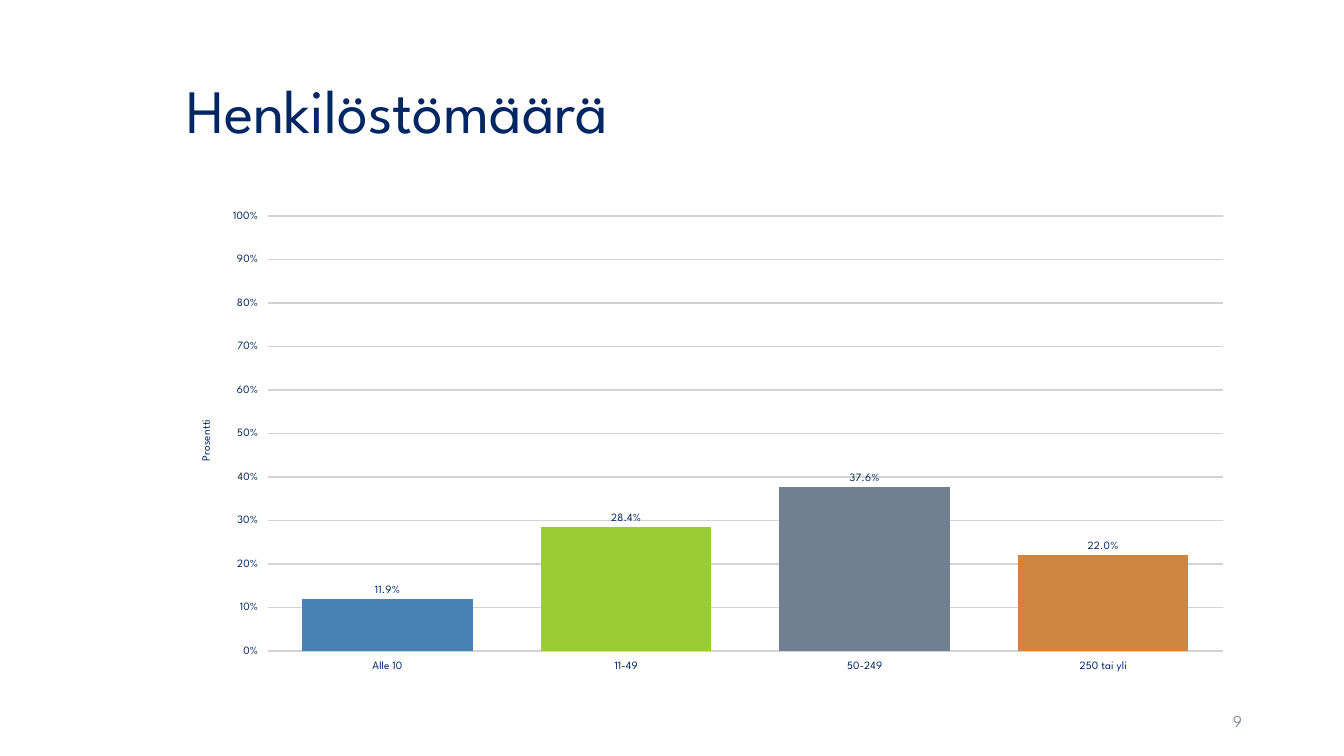
import pptx
import pptx.chart.data
import pptx.dml.color
import pptx.enum.chart
import pptx.enum.text
import pptx.oxml
import pptx.oxml.ns
import pptx.util

Cm = pptx.util.Cm
Pt = pptx.util.Pt
RGBColor = pptx.dml.color.RGBColor
PP_ALIGN = pptx.enum.text.PP_ALIGN
MSO_ANCHOR = pptx.enum.text.MSO_ANCHOR

FONT = "League Spartan"
NAVY = RGBColor(0x00, 0x26, 0x63)
GREY = RGBColor(0x8C, 0x8E, 0x9F)
GRID = RGBColor(0xD3, 0xD3, 0xD3)
BLUE = RGBColor(0x46, 0x82, 0xB4)
GREEN = RGBColor(0x9A, 0xCD, 0x32)
SLATE = RGBColor(0x70, 0x80, 0x90)
ORANGE = RGBColor(0xCD, 0x85, 0x3F)

STAFF = [
    ("Alle 10", 0.119, BLUE),
    ("11-49", 0.284, GREEN),
    ("50-249", 0.376, SLATE),
    ("250 tai yli", 0.22, ORANGE),
]


def set_font(font, size, color):
    font.name = FONT
    font.size = Pt(size)
    font.bold = False
    font.color.rgb = color


def add_text(s, text, box, size, color, align, anchor):
    tf = s.shapes.add_textbox(*box).text_frame
    tf.word_wrap = True
    tf.vertical_anchor = anchor
    tf.text = text
    p = tf.paragraphs[0]
    p.alignment = align
    set_font(p.runs[0].font, size, color)
    return p


def set_layout(parent, index, **values):
    for old in parent.findall(pptx.oxml.ns.qn("c:layout")):
        parent.remove(old)
    items = "".join(f'<c:{k} val="{v}"/>' for k, v in values.items())
    parent.insert(index, pptx.oxml.parse_xml(
        f'<c:layout {pptx.oxml.ns.nsdecls("c")}>'
        f"<c:manualLayout>{items}</c:manualLayout></c:layout>"))


def style_axis(axis):
    axis.major_tick_mark = pptx.enum.chart.XL_TICK_MARK.OUTSIDE
    axis.minor_tick_mark = pptx.enum.chart.XL_TICK_MARK.NONE
    axis.format.line.fill.background()
    set_font(axis.tick_labels.font, 8, NAVY)


def style_percent_axis(axis):
    style_axis(axis)
    axis.minimum_scale = 0
    axis.maximum_scale = 1
    axis.major_unit = 0.1
    axis.tick_labels.number_format = "0%"
    axis.tick_labels.number_format_is_linked = False
    axis.major_gridlines.format.line.color.rgb = GRID
    axis.major_gridlines.format.line.width = Pt(1)
    title = axis.axis_title
    tf = title.text_frame
    tf.text = "Prosentti"
    set_font(tf.paragraphs[0].runs[0].font, 8, NAVY)
    body = tf._txBody.bodyPr
    body.set("rot", "-5400000")
    body.set("vert", "horz")
    set_layout(title._element, 1, xMode="edge", yMode="edge", x=0.02, y=0.45)


def style_bars(plot):
    plot.gap_width = 40
    plot.overlap = -2
    plot.vary_by_categories = False
    series = plot.series[0]
    series.format.fill.solid()
    series.format.fill.fore_color.rgb = BLUE
    for i, (_, _, color) in enumerate(STAFF):
        fill = series.points[i].format.fill
        fill.solid()
        fill.fore_color.rgb = color
    labels = series.data_labels
    labels.show_value = True
    labels.number_format = "0.0%"
    labels.number_format_is_linked = False
    labels.position = pptx.enum.chart.XL_LABEL_POSITION.OUTSIDE_END
    set_font(labels.font, 8, NAVY)


def add_staff_chart(s, box):
    data = pptx.chart.data.CategoryChartData()
    data.categories = [name for name, _, _ in STAFF]
    data.add_series("Series 1", [share for _, share, _ in STAFF])
    kind = pptx.enum.chart.XL_CHART_TYPE.COLUMN_CLUSTERED
    chart = s.shapes.add_chart(kind, *box, data).chart
    chart.has_legend = False
    chart.has_title = False
    set_font(chart.font, 18, NAVY)
    style_axis(chart.category_axis)
    style_percent_axis(chart.value_axis)
    style_bars(chart.plots[0])
    set_layout(chart._chartSpace.chart.plotArea, 0, layoutTarget="inner",
               xMode="edge", yMode="edge", x=0.086, y=0.03, w=0.894, h=0.907)


def main():
    prs = pptx.Presentation()
    prs.slide_width = Cm(33.87)
    prs.slide_height = Cm(19.05)
    s = prs.slides.add_slide(prs.slide_layouts[6])
    p = add_text(s, "Henkilöstömäärä", (Cm(4.45), Cm(1.02), Cm(26.9), Cm(3.68)),
                 44, NAVY, PP_ALIGN.LEFT, MSO_ANCHOR.MIDDLE)
    p.line_spacing = 0.9
    p = add_text(s, "9", (Cm(23.93), Cm(17.65), Cm(7.62), Cm(1.02)),
                 12, GREY, PP_ALIGN.RIGHT, MSO_ANCHOR.MIDDLE)
    p.space_after = Pt(6)
    add_staff_chart(s, (Cm(4.45), Cm(5.08), Cm(26.9), Cm(12.09)))
    prs.save("out.pptx")


if __name__ == "__main__":
    main()
